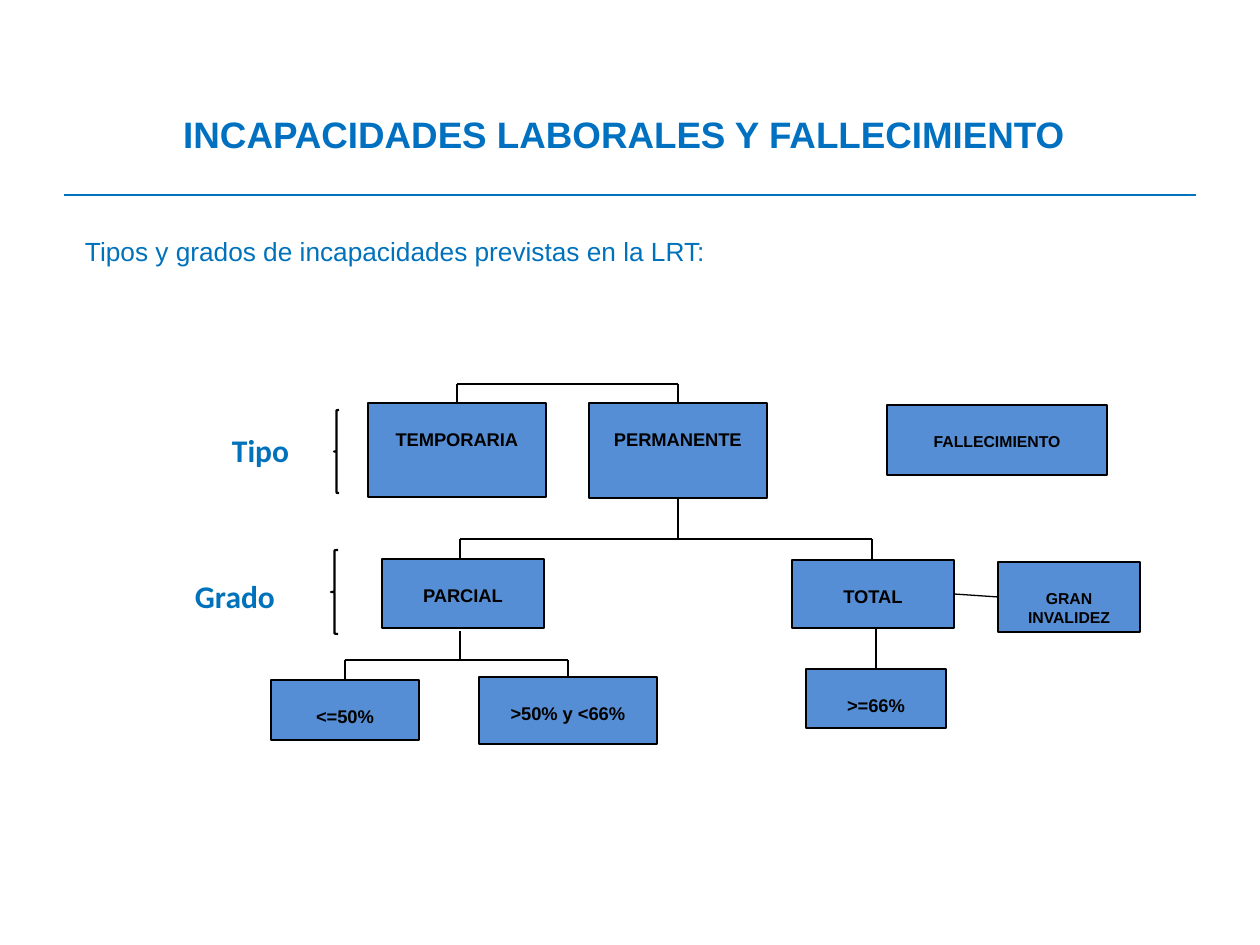
import pptx
import pptx.dml.color
import pptx.enum.shapes
import pptx.enum.text
import pptx.oxml
import pptx.util

RGBColor = pptx.dml.color.RGBColor
MSO_SHAPE = pptx.enum.shapes.MSO_SHAPE
PP_ALIGN = pptx.enum.text.PP_ALIGN
MSO_ANCHOR = pptx.enum.text.MSO_ANCHOR

TITLE_BLUE = RGBColor(0x00, 0x70, 0xC0)
BLUE = RGBColor(0x00, 0x72, 0xBC)
BOX_FILL = RGBColor(0x55, 0x8E, 0xD5)
BLACK = RGBColor(0x00, 0x00, 0x00)

EMU_PER_PX = 914400 / 126
TOP, LEFT, BOTTOM, RIGHT = range(4)


def px(*lengths):
    return [pptx.util.Emu(round(n * EMU_PER_PX)) for n in lengths]


def write(sp, text, size, color, insets, bold=True, font="Arial",
          align=PP_ALIGN.LEFT, anchor=MSO_ANCHOR.TOP):
    """Put one paragraph in sp; insets are left, top, right, bottom in px."""
    tf = sp.text_frame
    tf.word_wrap = True
    tf.vertical_anchor = anchor
    (tf.margin_left, tf.margin_top,
     tf.margin_right, tf.margin_bottom) = px(*insets)
    p = tf.paragraphs[0]
    p.alignment = align
    r = p.add_run()
    r.text = text
    r.font.name = font
    r.font.size = pptx.util.Pt(size)
    r.font.bold = bold
    r.font.color.rgb = color


def add_text(s, frame, *args, **kwargs):
    write(s.shapes.add_textbox(*px(*frame)), *args, **kwargs)


def add_box(s, frame, text, size=10.5, top=25):
    sp = s.shapes.add_shape(MSO_SHAPE.RECTANGLE, *px(*frame))
    sp.shadow.inherit = False
    sp.fill.solid()
    sp.fill.fore_color.rgb = BOX_FILL
    sp.line.color.rgb = BLACK
    sp.line.width = pptx.util.Pt(0.75)
    write(sp, text, size, BLACK, (12, top, 12, 0), align=PP_ALIGN.CENTER)
    return sp


def add_brace(s, *frame):
    sp = s.shapes.add_shape(MSO_SHAPE.LEFT_BRACE, *px(*frame))
    sp.shadow.inherit = False
    sp.fill.background()
    sp.line.color.rgb = BLACK
    sp.line.width = pptx.util.Pt(1.25)


def add_line(s, x1, y1, x2, y2, color=BLACK, begin=None, end=None):
    """Draw a line; begin and end are (shape, side) pairs to join."""
    c = s.shapes.add_connector(pptx.enum.shapes.MSO_CONNECTOR.STRAIGHT,
                               *px(x1, y1, x2, y2))
    c.line.color.rgb = color
    c.line.width = pptx.util.Pt(0.75)
    effects = '<a:effectLst %s/>' % pptx.oxml.ns.nsdecls("a")
    c._element.spPr.append(pptx.oxml.parse_xml(effects))
    if begin:
        c.begin_connect(*begin)
    if end:
        c.end_connect(*end)


def add_headings(s):
    add_line(s, 64, 195, 1196, 195, BLUE)
    add_text(s, (63, 38, 1134, 157), "INCAPACIDADES LABORALES Y FALLECIMIENTO",
             21, TITLE_BLUE, (0, 0, 12, 39), align=PP_ALIGN.CENTER,
             anchor=MSO_ANCHOR.BOTTOM)
    add_text(s, (76, 195, 936, 186),
             "Tipos y grados de incapacidades previstas en la LRT:",
             15, BLUE, (9, 54, 9, 5), bold=False)


def add_row_labels(s):
    add_text(s, (223, 426, 97, 43), "Tipo", 18, BLUE, (9, 5, 9, 5),
             font="Calibri")
    add_text(s, (183, 571, 127, 43), "Grado", 18, BLUE, (12, 6, 12, 6),
             font="Calibri")
    add_brace(s, 334, 410, 5, 83)
    add_brace(s, 331, 550, 7, 84)


def add_tree(s):
    temporary = add_box(s, (368, 403, 178, 94), "TEMPORARIA")
    permanent = add_box(s, (589, 403, 178, 95), "PERMANENTE")
    add_box(s, (887, 405, 220, 70), "FALLECIMIENTO", 9, 27)
    add_box(s, (382, 559, 162, 69), "PARCIAL")
    total = add_box(s, (792, 560, 162, 68), "TOTAL")
    severe = add_box(s, (998, 562, 142, 70), "GRAN INVALIDEZ", 9, 27)
    low = add_box(s, (271, 680, 148, 60), "<=50%")
    middle = add_box(s, (479, 677, 178, 67), ">50% y <66%")
    high = add_box(s, (806, 669, 140, 59), ">=66%")

    add_line(s, 457, 384, 678, 384)
    add_line(s, 457, 384, 457, 403, end=(temporary, TOP))
    add_line(s, 678, 384, 678, 403, end=(permanent, TOP))

    add_line(s, 678, 498, 678, 539, begin=(permanent, BOTTOM))
    add_line(s, 460, 539, 872, 539)
    for x in (460, 872):
        add_line(s, x, 539, x, 559)

    add_line(s, 460, 631, 460, 660)
    add_line(s, 345, 660, 568, 660)
    add_line(s, 345, 660, 345, 680, end=(low, TOP))
    add_line(s, 568, 660, 568, 677, end=(middle, TOP))

    add_line(s, 876, 628, 876, 669, end=(high, TOP))
    add_line(s, 954, 594, 998, 597, begin=(total, RIGHT), end=(severe, LEFT))


def main():
    prs = pptx.Presentation()
    prs.slide_width, prs.slide_height = px(1260, 945)
    s = prs.slides.add_slide(prs.slide_layouts[6])
    add_headings(s)
    add_row_labels(s)
    add_tree(s)
    prs.save("out.pptx")


if __name__ == "__main__":
    main()
